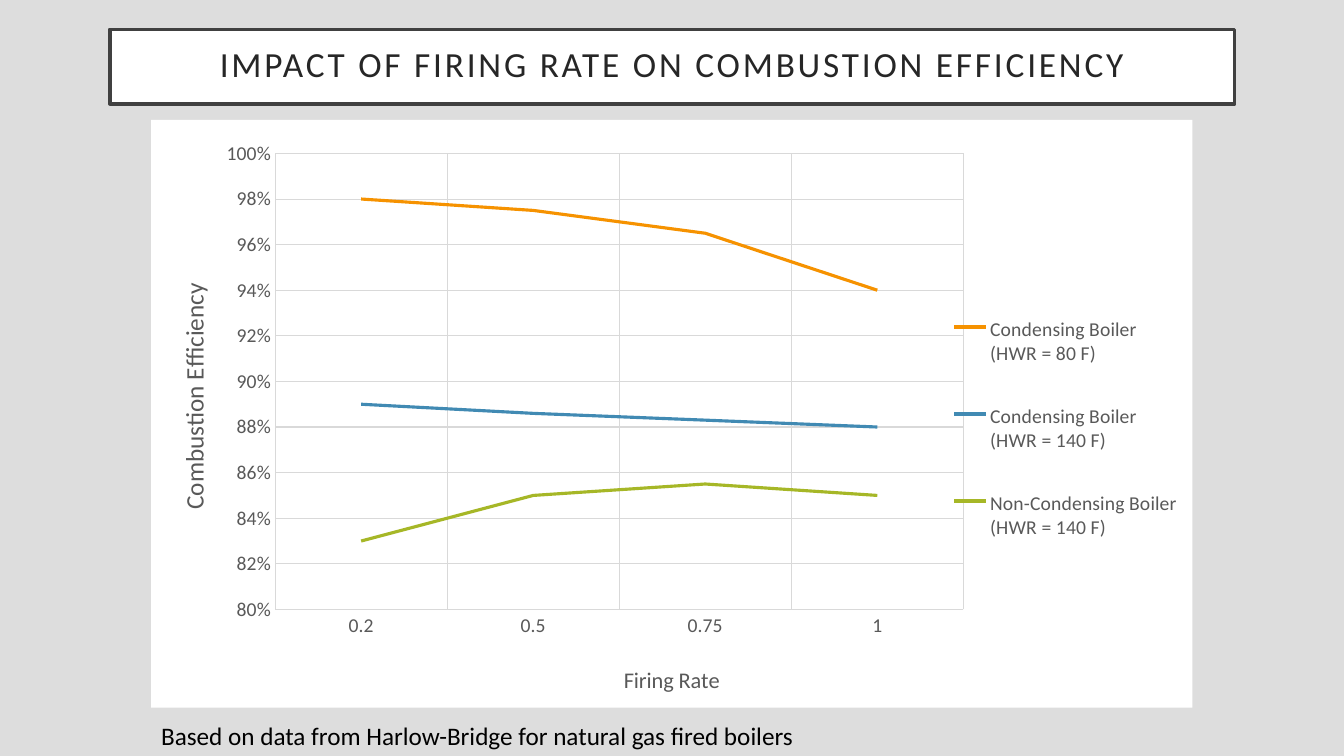
from dataclasses import dataclass

from lxml import etree
from pptx import Presentation
from pptx.chart.data import CategoryChartData
from pptx.dml.color import RGBColor
from pptx.enum.chart import XL_CHART_TYPE, XL_LEGEND_POSITION, XL_TICK_MARK
from pptx.enum.text import MSO_ANCHOR, MSO_AUTO_SIZE, PP_ALIGN
from pptx.oxml import parse_xml
from pptx.util import Pt

LINE = XL_CHART_TYPE.LINE
BOTTOM = XL_LEGEND_POSITION.BOTTOM
INSIDE, NO_TICK = XL_TICK_MARK.INSIDE, XL_TICK_MARK.NONE
MIDDLE, CENTER, LEFT = MSO_ANCHOR.MIDDLE, PP_ALIGN.CENTER, PP_ALIGN.LEFT
FIXED = MSO_AUTO_SIZE.NONE

FONT = "Calibri"
COLORS = {
    "back": "DDDDDD", "white": "FFFFFF", "frame": "404040", "title": "262626",
    "black": "000000", "gray": "595959", "grid": "D9D9D9",
    "orange": "F69200", "blue": "418AB3", "green": "A6B727",
}
NS_C = "http://schemas.openxmlformats.org/drawingml/2006/chart"
NS_A = "http://schemas.openxmlformats.org/drawingml/2006/main"


@dataclass
class Curve:
    name: str
    values: tuple[float, ...]
    color: str


@dataclass
class Scale:
    title: str
    size: float
    tick: int
    spot: tuple[float, ...]


RATES = (0.2, 0.5, 0.75, 1)
CURVES = (
    Curve("Condensing Boiler\n(HWR = 80 F)", (0.98, 0.975, 0.965, 0.94), "orange"),
    Curve("Condensing Boiler\n(HWR = 140 F)", (0.89, 0.886, 0.883, 0.88), "blue"),
    Curve("Non-Condensing Boiler\n(HWR = 140 F)", (0.83, 0.85, 0.855, 0.85), "green"),
)
RATE = Scale("Firing Rate", 16, INSIDE, (0.45, 0.92))
YIELD = Scale("Combustion Efficiency", 18, NO_TICK, (0.02, 0.27))


def rgb(name: str) -> RGBColor:
    return RGBColor.from_string(COLORS[name])


def style(font, size: float, color: str) -> None:
    font.name, font.size, font.bold = FONT, Pt(size), False
    font.color.rgb = rgb(color)


def write(frame, text: str, *, size: float, color: str, align=LEFT,
          space: float = 1, track: float = 0) -> None:
    para = frame.paragraphs[0]
    para.alignment, para.line_spacing = align, space
    run = para.add_run()
    run.text = text
    style(run.font, size, color)
    if track:
        run.font._element.set("spc", str(int(track * 100)))


def stroke(line, color: str, width: float) -> None:
    line.color.rgb = rgb(color)
    line.width = Pt(width)


def place(part, index: int, spot: tuple[float, ...], inner: bool = False) -> None:
    """Give a chart part a manual layout, in fractions of the chart."""
    for old in part.findall(f"{{{NS_C}}}layout"):
        part.remove(old)
    layout = parse_xml(f'<c:layout xmlns:c="{NS_C}"><c:manualLayout/></c:layout>')
    rows = [("layoutTarget", "inner")] if inner else []
    rows += [("xMode", "edge"), ("yMode", "edge")]
    rows += zip("xywh", spot)
    for tag, value in rows:
        etree.SubElement(layout[0], f"{{{NS_C}}}{tag}").set("val", str(value))
    part.insert(index, layout)


def dress(axis, scale: Scale) -> None:
    axis.has_major_gridlines = True
    stroke(axis.major_gridlines.format.line, "grid", 0.75)
    axis.major_tick_mark, axis.minor_tick_mark = scale.tick, NO_TICK
    labels = axis.tick_labels
    labels.number_format, labels.number_format_is_linked = "0%", False
    style(labels.font, 14, "gray")
    title = axis.axis_title
    write(title.text_frame, scale.title, size=scale.size, color="gray")
    place(title._element, 1, scale.spot)


def plot(slide) -> None:
    data = CategoryChartData(number_format="0.0%")
    data.categories = RATES
    for curve in CURVES:
        data.add_series(curve.name, curve.values)
    chart = slide.shapes.add_chart(
        LINE, Pt(108), Pt(85.7), Pt(743.8), Pt(419.8), data).chart
    chart.has_title = False
    style(chart.font, 10, "black")

    # Plot area and white chart background
    space = chart._chartSpace
    place(space.chart.plotArea, 0, (0.119, 0.057, 0.661, 0.776), inner=True)
    space.chart.addnext(parse_xml(
        f'<c:spPr xmlns:c="{NS_C}" xmlns:a="{NS_A}"><a:solidFill>'
        f'<a:srgbClr val="{COLORS["white"]}"/></a:solidFill>'
        '<a:ln><a:noFill/></a:ln></c:spPr>'))

    # Axes
    dress(chart.category_axis, RATE)
    stroke(chart.category_axis.format.line, "grid", 0.75)
    axis = chart.value_axis
    dress(axis, YIELD)
    axis.format.line.fill.background()
    axis.minimum_scale, axis.maximum_scale, axis.major_unit = 0.8, 1, 0.02

    # Curves
    chart.plots[0].vary_by_categories = False
    for series, curve in zip(chart.plots[0].series, CURVES):
        series.smooth = False
        stroke(series.format.line, curve.color, 2.25)

    # Legend at the right of the plot
    chart.has_legend = True
    legend = chart.legend
    legend.position, legend.include_in_layout = BOTTOM, False
    style(legend.font, 14, "gray")
    place(legend._element, 1, (0.763, 0.27, 0.23, 0.51))


def main() -> None:
    deck = Presentation()
    deck.slide_width, deck.slide_height = Pt(960), Pt(540)
    slide = deck.slides.add_slide(deck.slide_layouts[5])
    slide.background.fill.solid()
    slide.background.fill.fore_color.rgb = rgb("back")

    # Framed title
    title = slide.shapes.title
    title.left, title.top = Pt(78.5), Pt(20.9)
    title.width, title.height = Pt(803.5), Pt(53.3)
    title.fill.solid()
    title.fill.fore_color.rgb = rgb("white")
    stroke(title.line, "frame", 2.5)
    frame = title.text_frame
    frame.auto_size, frame.word_wrap = FIXED, True
    frame.vertical_anchor = MIDDLE
    frame.margin_left = frame.margin_right = Pt(14.4)
    frame.margin_top = frame.margin_bottom = Pt(14.4)
    write(frame, "IMPACT OF FIRING RATE ON COMBUSTION EFFICIENCY",
          size=25.2, color="title", align=CENTER, space=0.9, track=2)

    plot(slide)

    # Source note
    note = slide.shapes.add_textbox(Pt(108), Pt(511.2), Pt(656), Pt(28.8))
    note.text_frame.word_wrap = True
    write(note.text_frame,
          "Based on data from Harlow-Bridge for natural gas fired boilers",
          size=18, color="black")

    deck.save("out.pptx")


if __name__ == "__main__":
    main()
